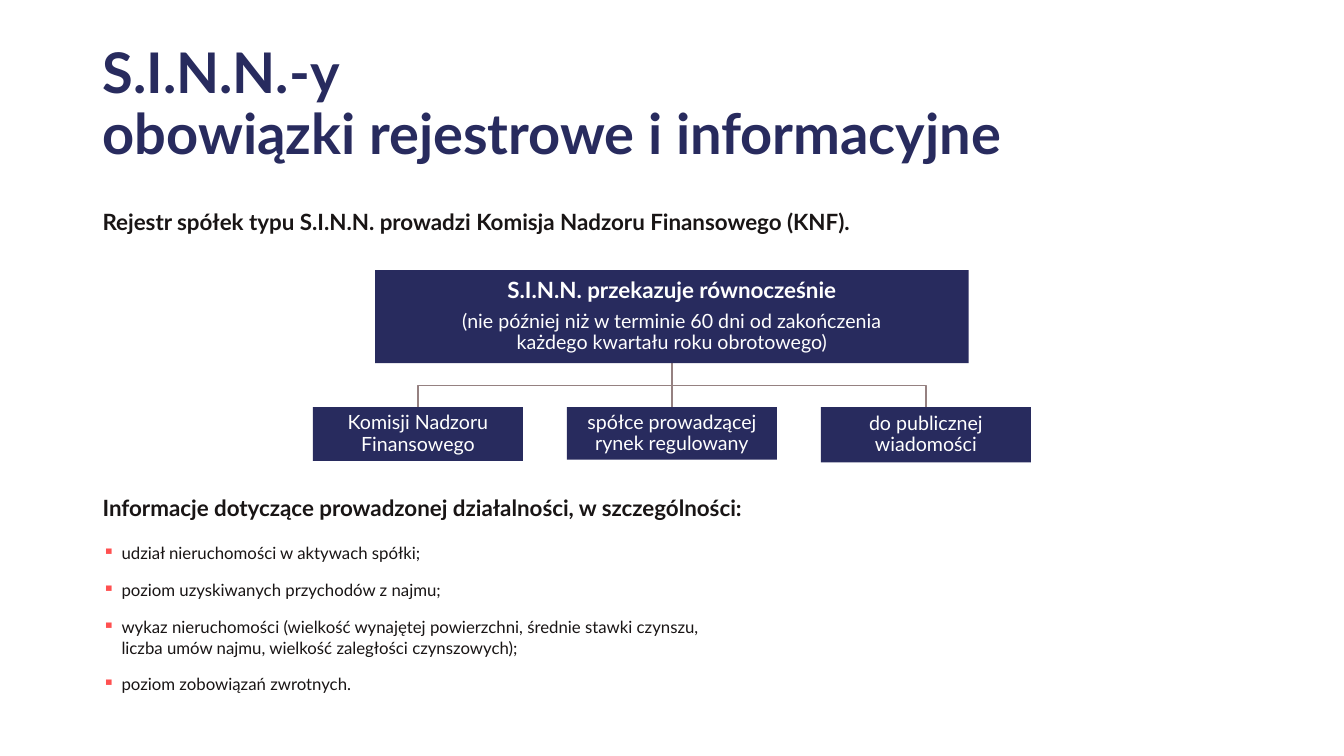
import pptx
import pptx.dml.color
import pptx.enum.shapes
import pptx.enum.text
import pptx.oxml
import pptx.oxml.ns
import pptx.util

Pt = pptx.util.Pt
ANCHOR = pptx.enum.text.MSO_ANCHOR
ALIGN = pptx.enum.text.PP_ALIGN
COLOURS = {"navy": "282B5E", "ink": "191515", "white": "FFFFFF", "line": "958181", "bullet": "FF5050"}


def colour(name):
    return pptx.dml.color.RGBColor.from_string(COLOURS[name])


class SlideBuilder:
    font_name = "Lato"

    def __init__(self, slide):
        self.slide = slide

    def fill_paragraph(self, paragraph, text, size, colour_name, bold=False, before=0, after=0):
        paragraph.text = text
        paragraph.space_before = Pt(before)
        paragraph.space_after = Pt(after)
        for run in paragraph.runs:
            run.font.name = self.font_name
            run.font.size = Pt(size)
            run.font.bold = bold
            run.font.color.rgb = colour(colour_name)

    def text_box(self, left, top, width, height, anchor=ANCHOR.TOP):
        text_frame = self.slide.shapes.add_textbox(Pt(left), Pt(top), Pt(width), Pt(height)).text_frame
        text_frame.word_wrap = True
        text_frame.vertical_anchor = anchor
        return text_frame

    def bullet(self, text_frame, text, size):
        paragraph = text_frame.add_paragraph()
        properties = paragraph._p.get_or_add_pPr()
        properties.set("marL", str(Pt(13.5)))
        properties.set("indent", str(-Pt(13.5)))
        namespace = pptx.oxml.ns.nsdecls("a")
        properties.append(pptx.oxml.parse_xml(
            f'<a:buClr {namespace}><a:srgbClr val="{COLOURS["bullet"]}"/></a:buClr>'))
        properties.append(pptx.oxml.parse_xml(f'<a:buChar {namespace} char="▪"/>'))
        self.fill_paragraph(paragraph, text, size, "ink", before=6, after=6)

    def box(self, centre, top, width, height, lines):
        shape = self.slide.shapes.add_shape(
            pptx.enum.shapes.MSO_SHAPE.RECTANGLE, Pt(centre - width / 2), Pt(top), Pt(width), Pt(height))
        shape.shadow.inherit = False
        shape.fill.solid()
        shape.fill.fore_color.rgb = colour("navy")
        shape.line.fill.background()
        text_frame = shape.text_frame
        text_frame.word_wrap = True
        text_frame.vertical_anchor = ANCHOR.MIDDLE
        text_frame.margin_left = text_frame.margin_right = Pt(0.7)
        text_frame.margin_top = text_frame.margin_bottom = Pt(0.7)
        for index, (text, size, bold) in enumerate(lines):
            paragraph = text_frame.add_paragraph() if index else text_frame.paragraphs[0]
            paragraph.alignment = ALIGN.CENTER
            paragraph.line_spacing = 0.9
            self.fill_paragraph(paragraph, text, size, "white", bold, after=5.6)

    def branch(self, points):
        corners = [(Pt(x), Pt(y)) for x, y in points]
        builder = self.slide.shapes.build_freeform(*corners[0])
        builder.add_line_segments(corners[1:], close=False)
        shape = builder.convert_to_shape()
        shape.shadow.inherit = False
        shape.fill.background()
        self.style_line(shape)

    def straight_line(self, x, top, bottom):
        connector = self.slide.shapes.add_connector(
            pptx.enum.shapes.MSO_CONNECTOR.STRAIGHT, Pt(x), Pt(top), Pt(x), Pt(bottom))
        self.style_line(connector)
        connector._element.spPr.append(pptx.oxml.parse_xml(f'<a:effectLst {pptx.oxml.ns.nsdecls("a")}/>'))

    def style_line(self, shape):
        shape.line.color.rgb = colour("line")
        shape.line.width = Pt(1)


def main():
    presentation = pptx.Presentation()
    presentation.slide_width = Pt(960)
    presentation.slide_height = Pt(540)
    builder = SlideBuilder(presentation.slides.add_slide(presentation.slide_layouts[6]))
    left, width = 66.24, 816.5

    title = builder.text_box(left, 18, width, 104.4, ANCHOR.BOTTOM).paragraphs[0]
    title.line_spacing = 0.9
    builder.fill_paragraph(title, "S.I.N.N.-y\vobowiązki rejestrowe i informacyjne", 40, "navy", True)

    register = builder.text_box(left, 145.4, width, 28).paragraphs[0]
    builder.fill_paragraph(
        register, "Rejestr spółek typu S.I.N.N. prowadzi Komisja Nadzoru Finansowego (KNF).", 16, "ink", True)

    details = builder.text_box(left, 349.2, width, 155.5)
    builder.fill_paragraph(
        details.paragraphs[0], "Informacje dotyczące prowadzonej działalności, w szczególności:",
        16, "ink", True, after=10)
    for text in (
        "udział nieruchomości w aktywach spółki;",
        "poziom uzyskiwanych przychodów z najmu;",
        "wykaz nieruchomości (wielkość wynajętej powierzchni, średnie stawki czynszu,"
        "\vliczba umów najmu, wielkość zaległości czynszowych);",
        "poziom zobowiązań zwrotnych.",
    ):
        builder.bullet(details, text, 12)

    centre, step = 480, 181.4
    root_top, root_height, recipient_top = 193, 66.5, 290.9
    root_bottom = root_top + root_height
    middle = (root_bottom + recipient_top) / 2
    for x in (centre + step, centre - step):
        builder.branch([(centre, root_bottom), (centre, middle), (x, middle), (x, recipient_top)])
    builder.straight_line(centre, root_bottom, recipient_top)

    builder.box(centre, root_top, 424, root_height, [
        ("S.I.N.N. przekazuje równocześnie", 16, True),
        ("(nie później niż w terminie 60 dni od zakończenia\vkażdego kwartału roku obrotowego)", 14, False),
    ])
    recipients = (
        ("Komisji Nadzoru Finansowego", 38.4),
        ("spółce prowadzącej\vrynek regulowany", 37.4),
        ("do publicznej wiadomości", 39.4),
    )
    for index, (text, height) in enumerate(recipients):
        builder.box(centre + (index - 1) * step, recipient_top, 150, height, [(text, 14, False)])

    presentation.save("out.pptx")


if __name__ == "__main__":
    main()
